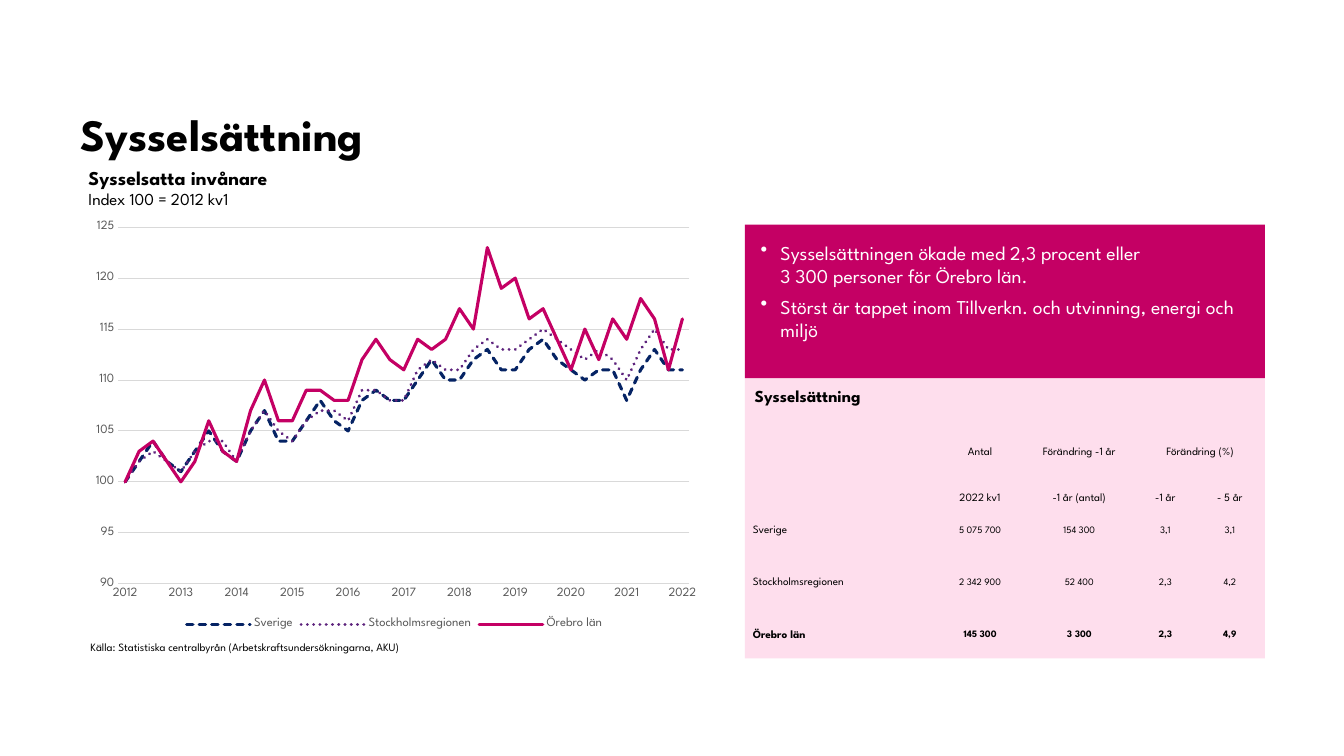
from lxml import etree
from pptx import Presentation
from pptx.chart.data import CategoryChartData
from pptx.dml.color import RGBColor
from pptx.enum.chart import XL_CHART_TYPE, XL_LEGEND_POSITION, XL_TICK_MARK
from pptx.enum.dml import MSO_LINE
from pptx.enum.shapes import MSO_SHAPE
from pptx.enum.text import MSO_ANCHOR, PP_ALIGN
from pptx.oxml import parse_xml
from pptx.oxml.ns import nsdecls, qn
from pptx.util import Cm, Pt

LINE = XL_CHART_TYPE.LINE
BOTTOM_LEGEND = XL_LEGEND_POSITION.BOTTOM
NO_TICK = XL_TICK_MARK.NONE
DASH, DOT = MSO_LINE.SQUARE_DOT, MSO_LINE.ROUND_DOT
RECT = MSO_SHAPE.RECTANGLE
TOP, MIDDLE, BOTTOM = MSO_ANCHOR.TOP, MSO_ANCHOR.MIDDLE, MSO_ANCHOR.BOTTOM
LEFT, CENTER = PP_ALIGN.LEFT, PP_ALIGN.CENTER

COLORS = {"black": "000000", "white": "FFFFFF", "grey": "595959", "grid": "D9D9D9",
          "cerise": "C40064", "pink": "FEDEED", "navy": "052364", "purple": "5D237D"}
NO_TABLE_STYLE = "{2D5ABB26-0587-4C30-8999-92F81FD0307C}"
MARGINS = ("margin_left", "margin_top", "margin_right", "margin_bottom")

SERIES = [
    ("Sverige", "navy", DASH,
     [100, 102, 104, 102, 101, 103, 105, 103, 102, 105, 107, 104, 104, 106,
      108, 106, 105, 108, 109, 108, 108, 110, 112, 110, 110, 112, 113, 111,
      111, 113, 114, 112, 111, 110, 111, 111, 108, 111, 113, 111, 111]),
    ("Stockholmsregionen", "purple", DOT,
     [100, 102, 103, 102, 101, 103, 104, 104, 102, 105, 107, 105, 104, 106,
      107, 107, 106, 109, 109, 108, 108, 111, 112, 111, 111, 113, 114, 113,
      113, 114, 115, 114, 113, 112, 113, 112, 110, 113, 115, 113, 113]),
    ("Örebro län", "cerise", None,
     [100, 103, 104, 102, 100, 102, 106, 103, 102, 107, 110, 106, 106, 109,
      109, 108, 108, 112, 114, 112, 111, 114, 113, 114, 117, 115, 123, 119,
      120, 116, 117, 114, 111, 115, 112, 116, 114, 118, 116, 111, 116]),
]
QUARTERS = ["" if q % 4 else str(2012 + q // 4) for q in range(41)]
PLOT_AREA = {"x": 0.06, "y": 0.03, "w": 0.91, "h": 0.85}

TABLE_ROWS = [
    ["", "Antal", "Förändring -1 år", "Förändring (%)", ""],
    ["", "2022 kv1", "-1 år (antal)", "-1 år", "- 5 år"],
    ["Sverige", "5 075 700", "154 300", "3,1", "3,1"],
    ["Stockholmsregionen", "2 342 900", "52 400", "2,3", "4,2"],
    ["Örebro län", "145 300", "3 300", "2,3", "4,9"],
]
COL_WIDTHS = [4.85, 2.16, 2.84, 1.5, 1.75]
ROW_HEIGHTS = [1.17, 1.17, 1.32, 1.32, 1.32]


class SlideBuilder:
    font_name = "League Spartan"

    def __init__(self, s):
        self.s = s

    def format_font(self, font, size, color="black", bold=False):
        values = {"name": self.font_name, "size": Pt(size), "bold": bold}
        for name, value in values.items():
            setattr(font, name, value)
        font.color.rgb = RGBColor.from_string(COLORS[color])

    def format_frame(self, tf, anchor, margins, wrap=True):
        values = dict(zip(MARGINS, map(Cm, margins)))
        values.update(vertical_anchor=anchor, word_wrap=wrap)
        for name, value in values.items():
            setattr(tf, name, value)

    def add_lines(self, p, lines):
        for i, (text, *style) in enumerate(lines):
            if i:
                p.add_line_break()
            r = p.add_run()
            r.text = text
            self.format_font(r.font, *style)

    def text(self, box, lines, anchor=TOP, margins=(0.25, 0.13, 0.25, 0.13), wrap=False):
        tf = self.s.shapes.add_textbox(*map(Cm, box)).text_frame
        self.format_frame(tf, anchor, margins, wrap)
        self.add_lines(tf.paragraphs[0], lines)

    def panel(self, box, color):
        sp = self.s.shapes.add_shape(RECT, *map(Cm, box))
        sp.shadow.inherit = False
        sp.fill.solid()
        sp.fill.fore_color.rgb = RGBColor.from_string(COLORS[color])
        sp.line.fill.background()
        return sp

    def bullets(self, box, color, items):
        tf = self.panel(box, color).text_frame
        self.format_frame(tf, TOP, [0.4] * 4)
        for i, lines in enumerate(items):
            p = tf.add_paragraph() if i else tf.paragraphs[0]
            pPr = p._p.get_or_add_pPr()
            pPr.set("marL", str(Cm(0.5)))
            pPr.set("indent", str(-Cm(0.5)))
            etree.SubElement(pPr, qn("a:buChar")).set("char", "•")
            p.alignment = LEFT
            if i:
                p.space_before = Pt(5)
            self.add_lines(p, [(line, 14, "white") for line in lines])

    def table(self, box, rows, widths, heights):
        table = self.s.shapes.add_table(len(rows), len(widths), *map(Cm, box)).table
        table.first_row = table.horz_banding = False
        table._tbl.tblPr.find(qn("a:tableStyleId")).text = NO_TABLE_STYLE
        for column, width in zip(table.columns, widths):
            column.width = Cm(width)
        for row, height in zip(table.rows, heights):
            row.height = Cm(height)
        table.cell(0, 3).merge(table.cell(0, 4))
        for i, row in enumerate(rows):
            for j, text in enumerate(row):
                cell = table.cell(i, j)
                cell.fill.background()
                cell.vertical_anchor = BOTTOM if i < 2 else MIDDLE
                for name, margin in zip(MARGINS, (0.03 if j else 0.2, 0.03, 0.03, 0)):
                    setattr(cell, name, Cm(margin))
                p = cell.text_frame.paragraphs[0]
                p.alignment = CENTER if j else LEFT
                if text:
                    size = 7 if i > 1 and j else 8
                    self.add_lines(p, [(text, size, "black", i == len(rows) - 1)])

    def line_chart(self, box, categories, series):
        data = CategoryChartData(number_format="0")
        data.categories = categories
        for name, _, _, values in series:
            data.add_series(name, values)
        chart = self.s.shapes.add_chart(LINE, *map(Cm, box), data).chart
        self.format_font(chart.font, 10)
        chart.has_title = False
        chart.has_legend = True
        chart.legend.position = BOTTOM_LEGEND
        chart.legend.include_in_layout = False
        self.format_font(chart.legend.font, 9, "grey")
        grid = RGBColor.from_string(COLORS["grid"])
        for axis in (chart.category_axis, chart.value_axis):
            axis.major_tick_mark = axis.minor_tick_mark = NO_TICK
            self.format_font(axis.tick_labels.font, 9, "grey")
        value_axis = chart.value_axis
        limits = {"minimum_scale": 90, "maximum_scale": 125, "major_unit": 5}
        for name, value in limits.items():
            setattr(value_axis, name, value)
        value_axis.format.line.fill.background()
        for line in (chart.category_axis.format.line, value_axis.major_gridlines.format.line):
            line.color.rgb = grid
            line.width = Pt(0.75)
        plot = chart.plots[0]
        plot.vary_by_categories = False
        for item, (_, color, dash, _) in zip(plot.series, series):
            item.smooth = False
            line = item.format.line
            line.color.rgb = RGBColor.from_string(COLORS[color])
            line.width = Pt(2.25)
            if dash:
                line.dash_style = dash
            item._element.xpath("c:spPr/a:ln")[0].set("cap", "rnd")
        self.place_plot(chart)

    def place_plot(self, chart):
        plot_area = chart._chartSpace.chart.plotArea
        for old in plot_area.findall(qn("c:layout")):
            plot_area.remove(old)
        modes = '<c:layoutTarget val="inner"/><c:xMode val="edge"/><c:yMode val="edge"/>'
        sizes = "".join(f'<c:{k} val="{v}"/>' for k, v in PLOT_AREA.items())
        plot_area.insert(0, parse_xml(
            f'<c:layout {nsdecls("c")}><c:manualLayout>{modes}{sizes}'
            "</c:manualLayout></c:layout>"))


def main():
    prs = Presentation()
    prs.slide_width, prs.slide_height = Cm(33.87), Cm(19.05)
    slide = SlideBuilder(prs.slides.add_slide(prs.slide_layouts[6]))
    slide.text((2.03, 0.94, 23.42, 3.1), [("Sysselsättning", 32, "black", True)],
               BOTTOM, [0] * 4, True)
    slide.text((2.03, 16, 9.83, 0.61),
               [("Källa: Statistiska centralbyrån (Arbetskraftsundersökningarna, AKU)", 8)])
    slide.panel((18.77, 9.53, 13.11, 7.06), "pink")
    slide.bullets((18.77, 5.66, 13.11, 3.87), "cerise", [
        ["Sysselsättningen ökade med 2,3 procent eller", "3 300 personer för Örebro län."],
        ["Störst är tappet inom Tillverkn. och utvinning, energi och miljö"],
    ])
    slide.text((18.77, 9.58, 3.35, 0.76), [("Sysselsättning", 12, "black", True)])
    slide.text((1.98, 4.04, 5.38, 1.37),
               [("Sysselsatta invånare", 14, "black", True), ("Index 100 = 2012 kv1", 12)])
    slide.table((18.77, 10.36, 13.1, 6.3), TABLE_ROWS, COL_WIDTHS, ROW_HEIGHTS)
    slide.line_chart((2.03, 5.41, 15.82, 10.57), QUARTERS, SERIES)
    prs.save("out.pptx")


if __name__ == "__main__":
    main()
